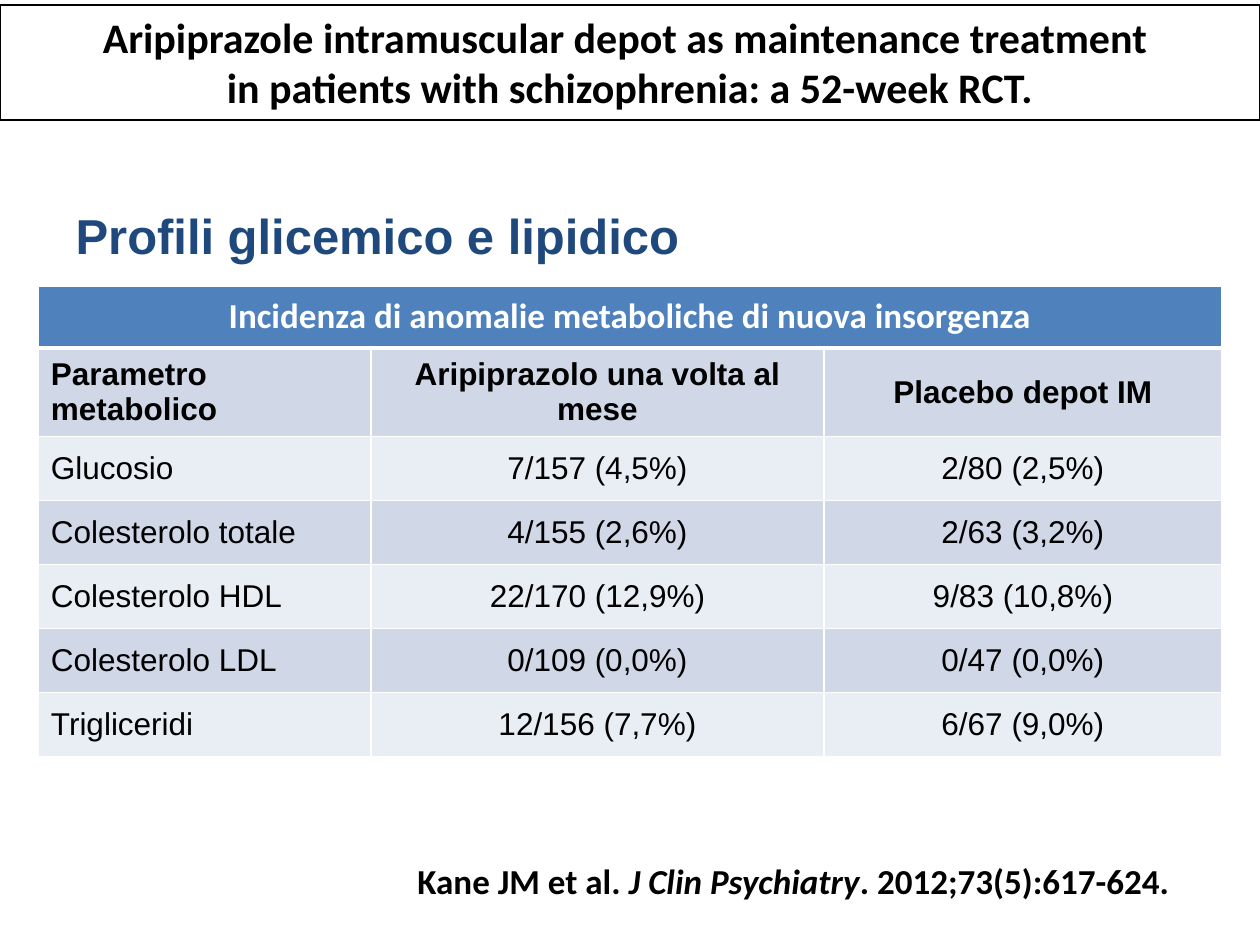
from lxml import etree
from pptx import Presentation
from pptx.dml.color import RGBColor
from pptx.enum.shapes import MSO_SHAPE
from pptx.enum.text import MSO_ANCHOR, MSO_AUTO_SIZE, PP_ALIGN
from pptx.oxml.ns import qn
from pptx.util import Pt

LEFT, MID, RIGHT = PP_ALIGN.LEFT, PP_ALIGN.CENTER, PP_ALIGN.RIGHT
TOP, CENTER, BOTTOM = MSO_ANCHOR.TOP, MSO_ANCHOR.MIDDLE, MSO_ANCHOR.BOTTOM
NO_FIT = MSO_AUTO_SIZE.NONE
RECT = MSO_SHAPE.RECTANGLE
TITLE_ONLY = 5

# Content
BANNER = [
    "Aripiprazole intramuscular depot as maintenance treatment ",
    "in patients with schizophrenia: a 52-week RCT.",
]
TITLE = "Profili glicemico e lipidico"
CAPTION = "Incidenza di anomalie metaboliche di nuova insorgenza"
ROWS = [
    ("Parametro metabolico", "Aripiprazolo una volta al mese", "Placebo depot IM"),
    ("Glucosio", "7/157 (4,5%)", "2/80 (2,5%)"),
    ("Colesterolo totale", "4/155 (2,6%)", "2/63 (3,2%)"),
    ("Colesterolo HDL", "22/170 (12,9%)", "9/83 (10,8%)"),
    ("Colesterolo LDL", "0/109 (0,0%)", "0/47 (0,0%)"),
    ("Trigliceridi", "12/156 (7,7%)", "6/67 (9,0%)"),
]
SOURCE = [
    ("Kane JM et al. ", False),
    ("J Clin Psychiatry", True),
    (". 2012;73(5):617-624.", False),
]

# Style and layout, lengths in px
COLORS = {
    "black": "000000", "white": "FFFFFF", "navy": "1F497D",
    "blue": "4F81BD", "band": "D0D8E8", "pale": "E9EDF4",
}
COLS = [333, 453, 398]
HEIGHTS = [62, 86] + [64] * 5


def px(n):
    return round(n * 914400 / 126)


def rgb(name):
    return RGBColor.from_string(COLORS[name])


def style(run, face, size, color, bold=True, italic=False):
    font = run.font
    font.name, font.size, font.bold, font.italic = face, Pt(size), bold, italic
    font.color.rgb = rgb(color)


def frame(shape, anchor):
    text = shape.text_frame
    text.word_wrap, text.auto_size = True, NO_FIT
    text.vertical_anchor = anchor
    return text


def border(cell, side, width):
    line = etree.Element(qn(f"a:ln{side}"), w=str(Pt(width)))
    fill = etree.SubElement(line, qn("a:solidFill"))
    etree.SubElement(fill, qn("a:srgbClr"), val=COLORS["white"])
    return line


def paint(cell, fill, base):
    cell.fill.solid()
    cell.fill.fore_color.rgb = rgb(fill)
    cell.vertical_anchor = CENTER
    cell.margin_left = cell.margin_right = px(13)
    cell.margin_top = cell.margin_bottom = px(9)
    props = cell._tc.get_or_add_tcPr()
    for i, (side, width) in enumerate(zip("LRTB", (1, 1, base[0], base[1]))):
        props.insert(i, border(cell, side, width))


def write(cell, words, align, *look):
    cell.text_frame.text = words
    para = cell.text_frame.paragraphs[0]
    para.alignment = align
    style(para.runs[0], *look)


deck = Presentation()
deck.slide_width, deck.slide_height = px(1260), px(945)
slide = deck.slides.add_slide(deck.slide_layouts[TITLE_ONLY])
shapes = slide.shapes

# Title
title = shapes.title
title.left, title.top, title.width, title.height = map(px, (63, 206, 1134, 58))
text = frame(title, CENTER)
text.text = TITLE
text.paragraphs[0].alignment = LEFT
style(text.paragraphs[0].runs[0], "Arial", 28, "navy")

# Table
grid = shapes.add_table(
    len(HEIGHTS), len(COLS), px(38), px(286), px(sum(COLS)), px(sum(HEIGHTS))
).table
for col, width in zip(grid.columns, COLS):
    col.width = px(width)
for row, height in zip(grid.rows, HEIGHTS):
    row.height = px(height)

grid.cell(0, 0).merge(grid.cell(0, len(COLS) - 1))
for c in range(len(COLS)):
    paint(grid.cell(0, c), "blue", (1, 3))
write(grid.cell(0, 0), CAPTION, MID, "Calibri", 20, "white")

for r, row in enumerate(ROWS, 1):
    for c, words in enumerate(row):
        cell = grid.cell(r, c)
        paint(cell, "band" if r % 2 else "pale", (3 if r == 1 else 1, 1))
        write(cell, words, MID if c else LEFT, "Arial", 18, "black", r == 1)

# Source line
note = shapes.add_textbox(*map(px, (77, 811, 1105, 97)))
para = frame(note, BOTTOM).paragraphs[0]
para.alignment = RIGHT
for words, italic in SOURCE:
    run = para.add_run()
    run.text = words
    style(run, "Calibri", 20, "black", italic=italic)

# Banner
box = shapes.add_shape(RECT, *map(px, (0, 5, 1260, 115)))
box.shadow.inherit = False
box.fill.background()
box.line.color.rgb = rgb("black")
box.line.width = Pt(0.75)
text = frame(box, TOP)
text.text = "\n".join(BANNER)
for para in text.paragraphs:
    para.alignment = MID
    style(para.runs[0], "Calibri", 24, "black")

deck.save("out.pptx")
